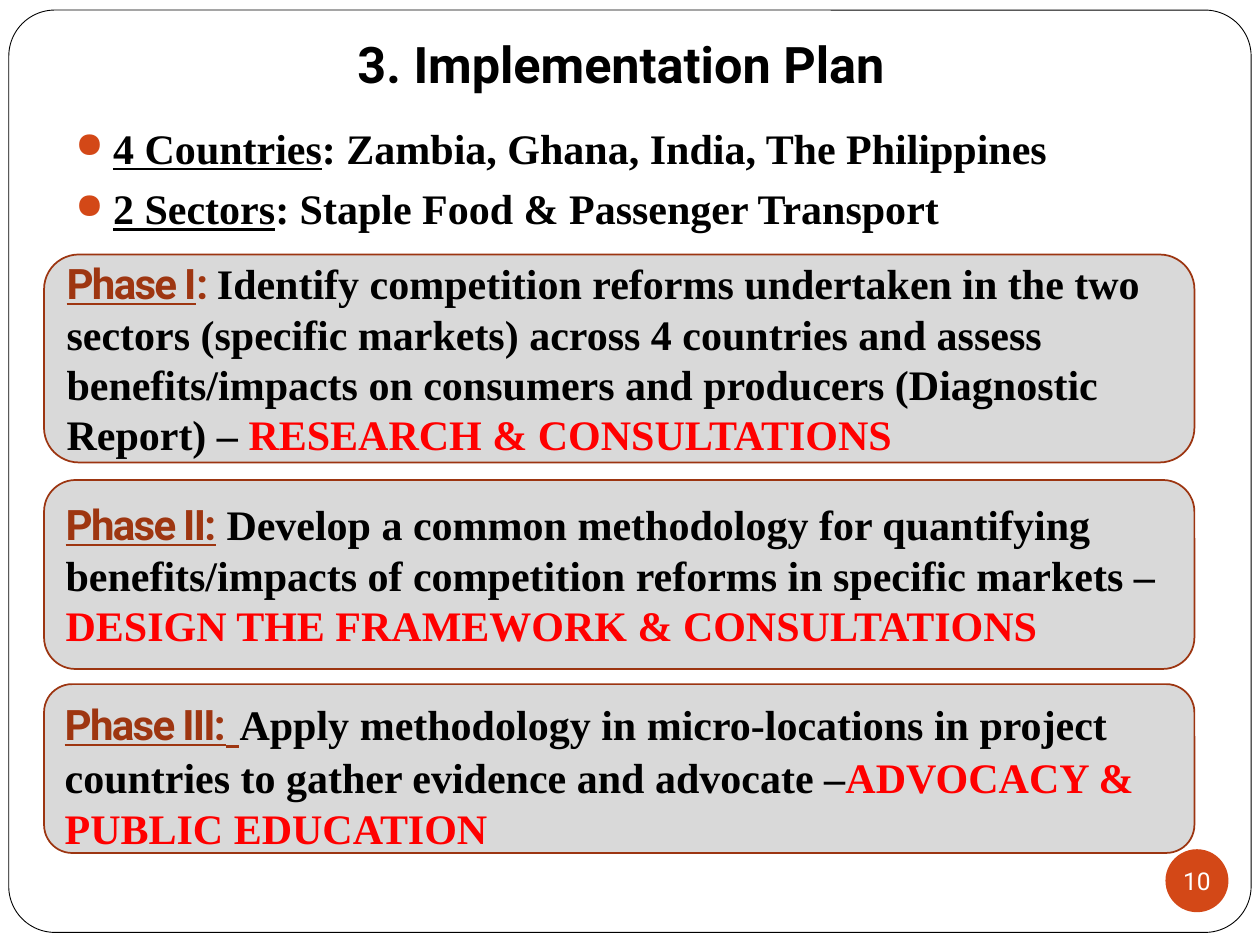
from pptx import Presentation
from pptx.dml.color import RGBColor
from pptx.enum.shapes import MSO_SHAPE as SHAPE
from pptx.enum.text import MSO_ANCHOR as ANCHOR, PP_ALIGN as ALIGN
from pptx.oxml.ns import qn
from pptx.util import Inches, Pt
from lxml.etree import SubElement

# Content
TITLE = "3. Implementation Plan"
SCOPE = [
    ("4 Countries", ": Zambia, Ghana, India, The Philippines"),
    ("2 Sectors", ": Staple Food & Passenger Transport"),
]
# top, height, label, (gap, size, underlined), description, outcome
PHASES = [
    (2.02, 1.65, "Phase I", (": ", 24, False),
     "Identify competition reforms undertaken in the two sectors (specific "
     "markets) across 4 countries and assess benefits/impacts on consumers "
     "and producers (Diagnostic Report) – ",
     "RESEARCH & CONSULTATIONS"),
    (3.81, 1.5, "Phase II:", (" ", 24, False),
     "Develop a common methodology for quantifying benefits/impacts of "
     "competition reforms in specific markets – ",
     "DESIGN THE FRAMEWORK & CONSULTATIONS"),
    (5.43, 1.34, "Phase III:", (" ", 32, True),
     "Apply methodology in micro-locations in project countries to gather "
     "evidence and advocate –",
     "ADVOCACY & PUBLIC EDUCATION"),
]
PAGE = "10"

SANS, SERIF = "Roboto", "Times New Roman"
BLACK, WHITE, RED = "000000", "FFFFFF", "FF0000"
ORANGE, RUST, EDGE, GREY = "D34817", "9E3611", "9C3511", "D9D9D9"


def rgb(value):
    return RGBColor.from_string(value)


def add_run(p, text, size=24, font=SERIF, color=BLACK, bold=True,
            underline=False, spacing=0):
    r = p.add_run()
    r.text = text
    f = r.font
    f.size, f.name, f.bold, f.underline = Pt(size), font, bold, underline
    f.color.rgb = rgb(color)
    if spacing:
        r._r.get_or_add_rPr().set("spc", str(spacing * 100))


def add_panel(s, kind, box, fill, line=None, width=1):
    sp = s.shapes.add_shape(kind, *map(Inches, box))
    sp.shadow.inherit = False
    sp.fill.solid()
    sp.fill.fore_color.rgb = rgb(fill)
    if line:
        sp.line.color.rgb = rgb(line)
        sp.line.width = Pt(width)
    else:
        sp.line.fill.background()
    return sp


def add_text(s, box):
    tf = s.shapes.add_textbox(*map(Inches, box)).text_frame
    tf.word_wrap = True
    return tf


def add_bullet(p, char, color, percent, indent):
    pPr = p._p.get_or_add_pPr()
    pPr.set("marL", str(Inches(indent)))
    pPr.set("indent", str(-Inches(indent)))
    clr = SubElement(pPr, qn("a:buClr"))
    SubElement(clr, qn("a:srgbClr"), val=color)
    SubElement(pPr, qn("a:buSzPct"), val=str(percent * 1000))
    SubElement(pPr, qn("a:buChar"), char=char)


prs = Presentation()
prs.slide_width, prs.slide_height = Inches(10), Inches(7.5)
s = prs.slides.add_slide(prs.slide_layouts[6])

# Frame
frame = add_panel(s, SHAPE.ROUNDED_RECTANGLE, (0.07, 0.08, 9.86, 7.32),
                  WHITE, BLACK, 0.5)
frame.adjustments[0] = 0.05

# Title
tf = add_text(s, (0.43, 0.29, 9, 0.55))
tf.vertical_anchor = ANCHOR.BOTTOM
tf.margin_bottom = Inches(0.1)
p = tf.paragraphs[0]
p.alignment = ALIGN.CENTER
add_run(p, TITLE, 28.8, SANS)

# Page number
badge = add_panel(s, SHAPE.OVAL, (9.25, 6.74, 0.5, 0.5), ORANGE)
tf = badge.text_frame
tf.margin_left = tf.margin_right = tf.margin_top = tf.margin_bottom = 0
tf.word_wrap = False
tf.vertical_anchor = ANCHOR.MIDDLE
p = tf.paragraphs[0]
p.alignment = ALIGN.CENTER
add_run(p, PAGE, 14, SANS, WHITE, bold=False)

# Scope bullets
tf = add_text(s, (0.5, 0.92, 9, 1.05))
for i, (label, detail) in enumerate(SCOPE):
    p = tf.add_paragraph() if i else tf.paragraphs[0]
    p.space_before = Pt(5.8)
    add_bullet(p, "●", ORANGE, 85, 0.3)
    add_run(p, label, underline=True)
    add_run(p, detail)

# Phase panels
for top, height, label, (gap, size, underlined), detail, outcome in PHASES:
    sp = add_panel(s, SHAPE.ROUNDED_RECTANGLE, (0.35, top, 9.13, height),
                   GREY, EDGE)
    tf = sp.text_frame
    tf.word_wrap = True
    tf.vertical_anchor = ANCHOR.MIDDLE
    p = tf.paragraphs[0]
    p.alignment = ALIGN.LEFT
    add_run(p, label, 24, SANS, RUST, underline=True, spacing=-1)
    add_run(p, gap, size, SANS, RUST, underline=underlined, spacing=-1)
    add_run(p, detail)
    add_run(p, outcome, color=RED)

prs.save("out.pptx")
